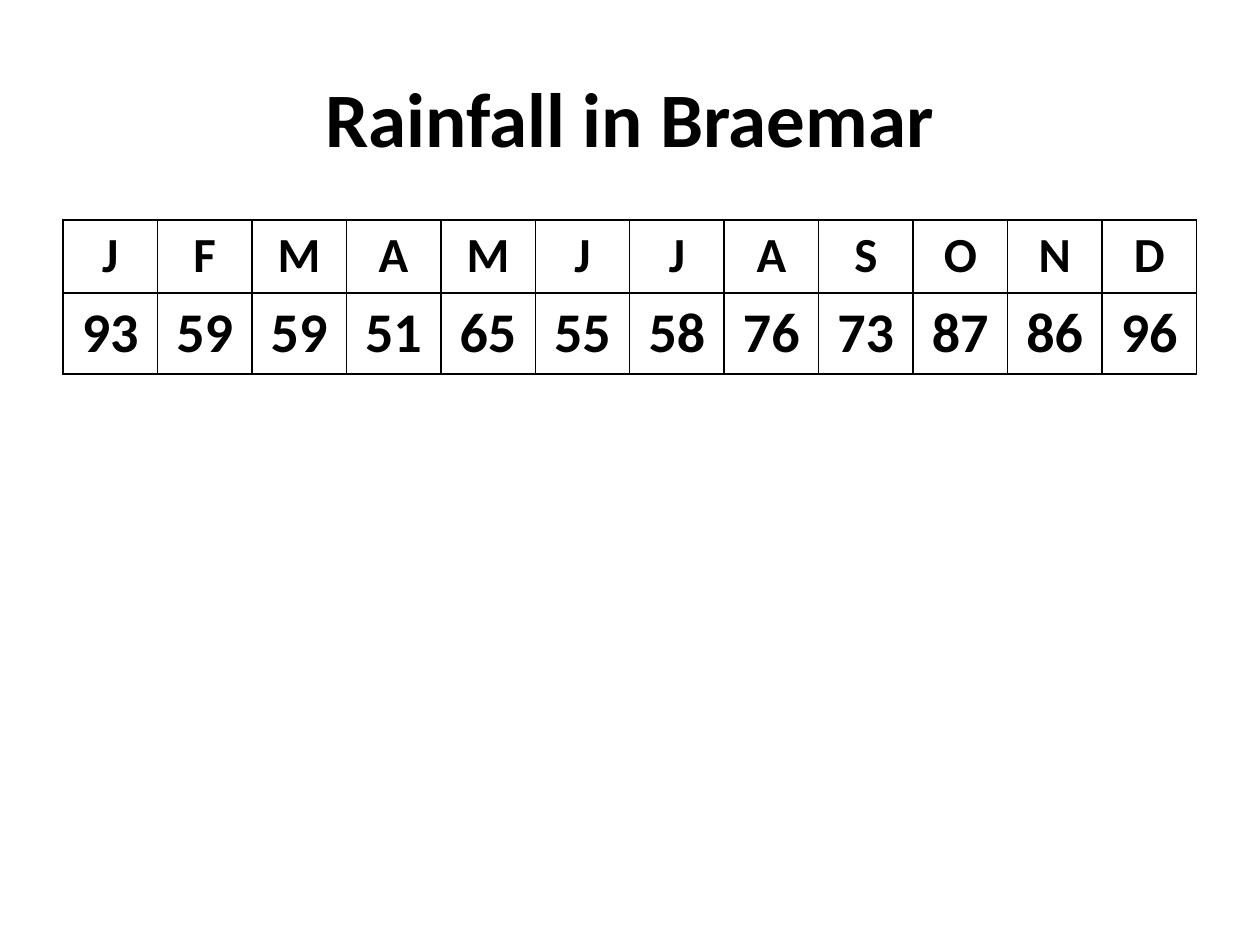
from pptx import Presentation
from pptx.dml.color import RGBColor
from pptx.enum.text import MSO_ANCHOR, PP_ALIGN
from pptx.oxml import parse_xml
from pptx.oxml.ns import nsdecls
from pptx.util import Pt

PX = 914400 // 126
COLORS = {"ink": "000000", "paper": "FFFFFF"}
MONTHS = "JFMAMJJASOND"
RAINFALL = [93, 59, 59, 51, 65, 55, 58, 76, 73, 87, 86, 96]


def write_text(frame, text, size, color="ink", font="Calibri", bold=True):
    para = frame.paragraphs[0]
    para.alignment = PP_ALIGN.CENTER
    span = para.add_run()
    span.text = str(text)
    span.font.name = font
    span.font.size = Pt(size)
    span.font.bold = bold
    span.font.color.rgb = RGBColor.from_string(COLORS[color])


def add_borders(cell, color="ink", width=1):
    props = cell._tc.get_or_add_tcPr()
    for index, side in enumerate(("lnL", "lnR", "lnT", "lnB")):
        line = parse_xml(
            f'<a:{side} {nsdecls("a")} w="{Pt(width)}"><a:solidFill>'
            f'<a:srgbClr val="{COLORS[color]}"/></a:solidFill></a:{side}>')
        props.insert(index, line)


deck = Presentation()
deck.slide_width, deck.slide_height = 1260 * PX, 945 * PX
page = deck.slides.add_slide(deck.slide_layouts[6])

# Title
title = page.shapes.add_textbox(63 * PX, 38 * PX, 1134 * PX, 157 * PX)
title.text_frame.word_wrap = True
title.text_frame.vertical_anchor = MSO_ANCHOR.MIDDLE
write_text(title.text_frame, "Rainfall in Braemar", size=44)

# Monthly rainfall table: columns share the width equally
table = page.shapes.add_table(
    2, len(MONTHS), 63 * PX, 220 * PX, 1134 * PX, 154 * PX).table
table.first_row = table.horz_banding = False
rows = [(MONTHS, 28, 73), (RAINFALL, 32, 81)]
for row_index, (values, size, height) in enumerate(rows):
    table.rows[row_index].height = height * PX
    for column, value in enumerate(values):
        cell = table.cell(row_index, column)
        cell.fill.solid()
        cell.fill.fore_color.rgb = RGBColor.from_string(COLORS["paper"])
        add_borders(cell)
        write_text(cell.text_frame, value, size=size)

deck.save("out.pptx")
